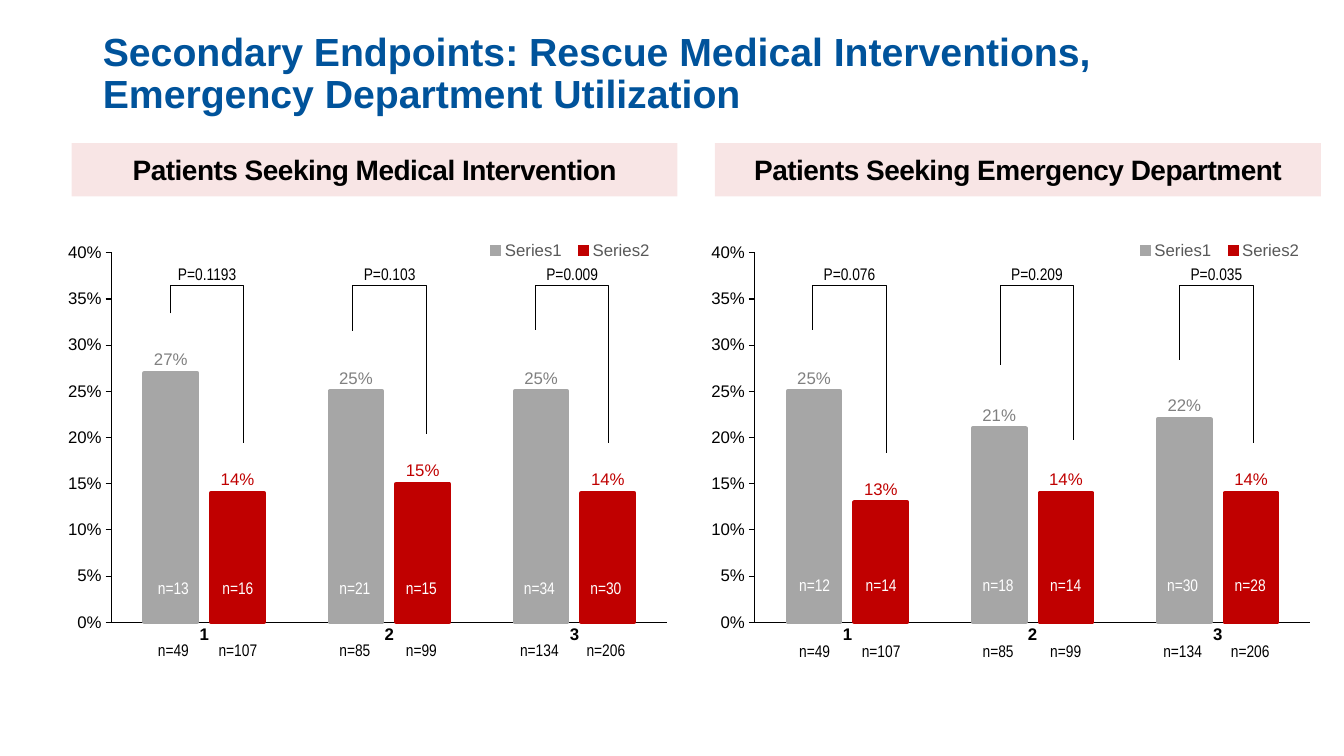
from lxml import etree
from pptx import Presentation, util as u
from pptx.chart.data import CategoryChartData
from pptx.dml.color import RGBColor
from pptx.enum import chart as ch, shapes, text
from pptx.oxml import parse_xml
from pptx.oxml.ns import nsdecls, qn

BLUE = RGBColor(0x00, 0x53, 0x9B)
RED = RGBColor(0xC0, 0x00, 0x00)
GRAY = RGBColor(0xA6, 0xA6, 0xA6)
MID = RGBColor(0x80, 0x80, 0x80)
DARK = RGBColor(0x59, 0x59, 0x59)
BLACK = RGBColor(0, 0, 0)
WHITE = RGBColor(0xFF, 0xFF, 0xFF)

TITLE = "Secondary Endpoints: Rescue Medical Interventions, Emergency Department Utilization"
SERIES = [("Series1", GRAY, MID), ("Series2", RED, RED)]
GROUPS = ["1", "2", "3"]
TOTALS = [49, 107, 85, 99, 134, 206]
# tests: p value, label left, bracket's left end and right end
PANELS = [
    dict(head="Patients Seeking Medical Intervention", head_x=0.71, chart_x=0.55,
         rates=[(0.27, 0.25, 0.25), (0.14, 0.15, 0.14)], legend_x=0.68,
         count=[13, 16, 21, 15, 34, 30], cols=[1.44, 2.08, 3.24, 3.9, 5.07, 5.73],
         count_y=5.68, total_y=6.3,
         tests=[("P=0.1193", 1.62, 3.11, 4.4), ("P=0.103", 3.43, 3.28, 4.31),
                ("P=0.009", 5.24, 3.27, 4.4)]),
    dict(head="Patients Seeking Emergency Department", head_x=7.09, chart_x=6.93,
         rates=[(0.25, 0.21, 0.22), (0.13, 0.14, 0.14)], legend_x=0.69,
         count=[12, 14, 18, 14, 30, 28], cols=[7.8, 8.46, 9.62, 10.29, 11.45, 12.12],
         count_y=5.65, total_y=6.31,
         tests=[("P=0.076", 7.99, 3.27, 4.49), ("P=0.209", 9.85, 3.62, 4.37),
                ("P=0.035", 11.63, 3.57, 4.4)]),
]
PLOT = dict(layoutTarget="inner", xMode="edge", yMode="edge", x=0.09, y=0.04, w=0.89, h=0.82)
BRACKET = dict(inset=0.07, top=2.83, width=0.73)


def apply(obj, **values):
    for key, val in values.items():
        setattr(obj, key, val)


def style(font, size, color, name="Arial", bold=False):
    apply(font, size=u.Pt(size), name=name, bold=bold)
    font.color.rgb = color


def place(shape, *box):
    apply(shape, **dict(zip(("left", "top", "width", "height"), map(u.Inches, box))))


def write(shape, words, size, color, name="Arial", bold=False, align=text.PP_ALIGN.CENTER,
          space=1.0, **frame):
    apply(shape.text_frame, **frame)
    par = shape.text_frame.paragraphs[0]
    apply(par, alignment=align, line_spacing=space)
    run = par.add_run()
    run.text = words
    style(run.font, size, color, name, bold)
    return run


def label(words, x, y, width, height, color=BLACK, **frame):
    box = slide.shapes.add_textbox(*map(u.Inches, (x, y, width, height)))
    write(box, words, 12, color, "Arial Narrow", **frame)


def lay_out(parent, values):
    """Fix the place of a chart part, in fractions of the chart."""
    for old in parent.findall(qn("c:layout")):
        parent.remove(old)
    rows = "".join(f'<c:{key} val="{val}"/>' for key, val in values.items())
    node = parse_xml(f'<c:layout {nsdecls("c")}><c:manualLayout>{rows}</c:manualLayout></c:layout>')
    before = parent.find(qn("c:legendPos"))
    parent.insert(0 if before is None else parent.index(before) + 1, node)


def add_bars(panel):
    data = CategoryChartData(number_format="0%")
    data.categories = GROUPS
    for (name, *_), vals in zip(SERIES, panel["rates"]):
        data.add_series(name, vals)
    chart = slide.shapes.add_chart(
        ch.XL_CHART_TYPE.COLUMN_CLUSTERED,
        *map(u.Inches, (panel["chart_x"], 2.33, 6.19, 4.47)), data).chart
    apply(chart, has_title=False, has_legend=True)
    style(chart.font, 10, BLACK)
    lay_out(chart.plots[0]._element.getparent(), PLOT)

    apply(chart.legend, position=ch.XL_LEGEND_POSITION.BOTTOM, include_in_layout=False)
    style(chart.legend.font, 12, DARK)
    lay_out(chart.legend._element, dict(xMode="edge", yMode="edge", x=panel["legend_x"],
                                        y=0.01, w=0.29, h=0.05))

    apply(chart.value_axis, minimum_scale=0, maximum_scale=0.4, major_unit=0.05)
    apply(chart.value_axis.tick_labels, number_format="0%", number_format_is_linked=False)
    marks = ch.XL_TICK_MARK
    for axis, tick, bold in ((chart.category_axis, marks.NONE, True),
                             (chart.value_axis, marks.OUTSIDE, False)):
        apply(axis, has_major_gridlines=False, major_tick_mark=tick, minor_tick_mark=marks.NONE)
        style(axis.tick_labels.font, 12, BLACK, bold=bold)
        axis.format.line.color.rgb = BLACK
        axis.format.line.width = u.Pt(0.75)

    plot = chart.plots[0]
    apply(plot, gap_width=125, overlap=-27, vary_by_categories=False)
    for bars, (_, color, ink) in zip(plot.series, SERIES):
        bars.format.fill.solid()
        bars.format.fill.fore_color.rgb = color
        bars.format.line.color.rgb = color
        bars.format.line.width = u.Pt(3)
        etree.SubElement(bars.format.line._ln, qn("a:round"))
        apply(bars.data_labels, show_value=True, number_format="0%",
              number_format_is_linked=False, position=ch.XL_LABEL_POSITION.OUTSIDE_END)
        style(bars.data_labels.font, 12, ink)


def add_head(panel):
    bar = slide.shapes.add_shape(shapes.MSO_SHAPE.RECTANGLE,
                                 *map(u.Inches, (panel["head_x"], 1.42, 6.01, 0.53)))
    bar.shadow.inherit = False
    bar.fill.solid()
    bar.fill.fore_color.rgb = RED
    tint = bar.fill._xPr.find(".//" + qn("a:srgbClr"))
    etree.SubElement(tint, qn("a:alpha")).set("val", "10000")
    bar.line.fill.background()
    run = write(bar, panel["head"], 20, BLACK, bold=True, space=0.8, word_wrap=True,
                vertical_anchor=text.MSO_ANCHOR.MIDDLE, margin_left=0, margin_right=0,
                margin_top=u.Inches(0.1), margin_bottom=u.Inches(0.05))
    run.font._element.set("spc", "-40")


def add_test(words, x, start, end):
    """Draw a p value and the bracket that joins its two bars."""
    label(words, x, 2.57, 0.87, 0.3, word_wrap=False)
    left, top = x + BRACKET["inset"], BRACKET["top"]
    right = left + BRACKET["width"]
    pen = slide.shapes.build_freeform(u.Inches(left), u.Inches(start))
    pen.add_line_segments([(u.Inches(a), u.Inches(b)) for a, b in
                           ((left, top), (right, top), (right, end))], close=False)
    line = pen.convert_to_shape()
    line.shadow.inherit = False
    line.fill.background()
    line.line.color.rgb = BLACK
    line.line.width = u.Pt(0.75)


deck = Presentation()
apply(deck, slide_width=u.Inches(13.33), slide_height=u.Inches(7.5))
slide = deck.slides.add_slide(deck.slide_layouts[5])
title = slide.shapes.title
place(title, 0.92, 0, 11.5, 1.21)
write(title, TITLE, 28, BLUE, bold=True, align=text.PP_ALIGN.LEFT, space=0.9, word_wrap=True,
      vertical_anchor=text.MSO_ANCHOR.BOTTOM, auto_size=text.MSO_AUTO_SIZE.NONE)

for panel in PANELS:
    add_bars(panel)
    add_head(panel)
    for nums, y, color in ((panel["count"], panel["count_y"], WHITE),
                           (TOTALS, panel["total_y"], BLACK)):
        for num, x in zip(nums, panel["cols"]):
            label(f"n={num}", x, y, 0.56, 0.32, color,
                  word_wrap=True, margin_left=0, margin_right=0)
    for test in panel["tests"]:
        add_test(*test)

deck.save("out.pptx")
